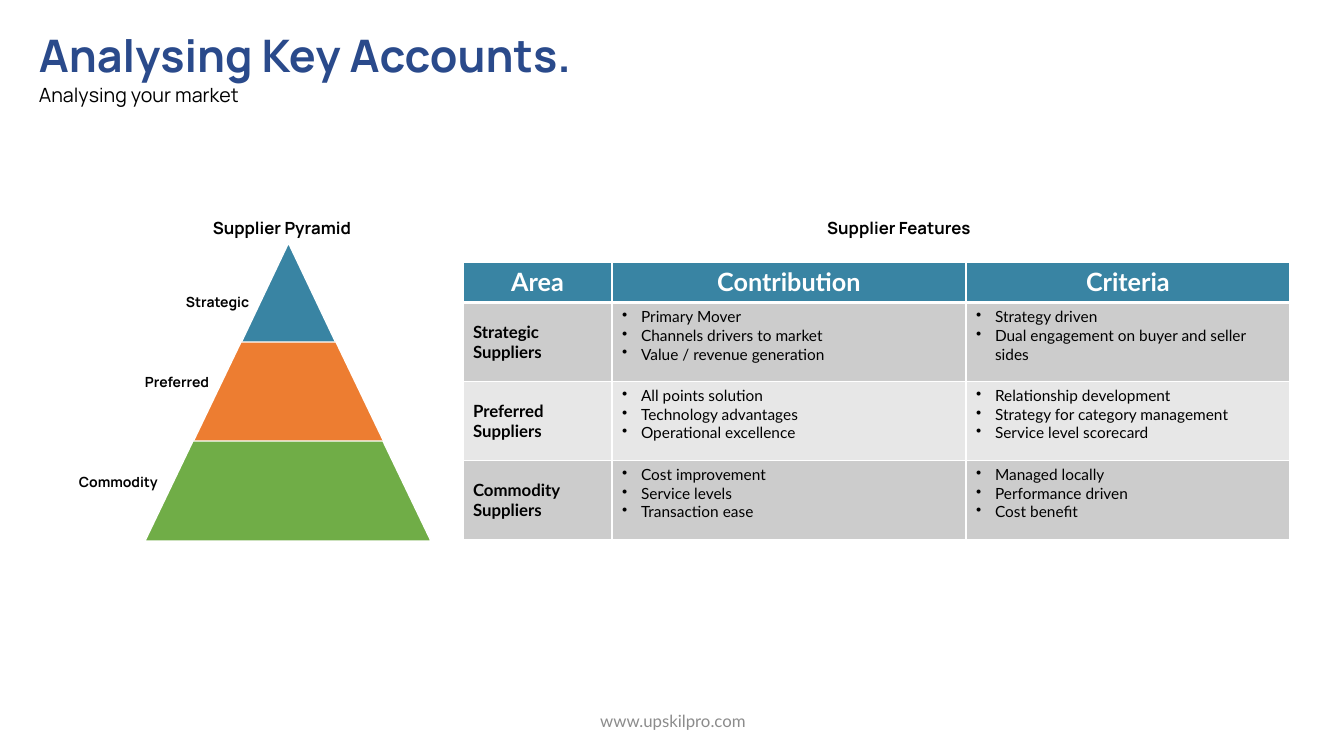
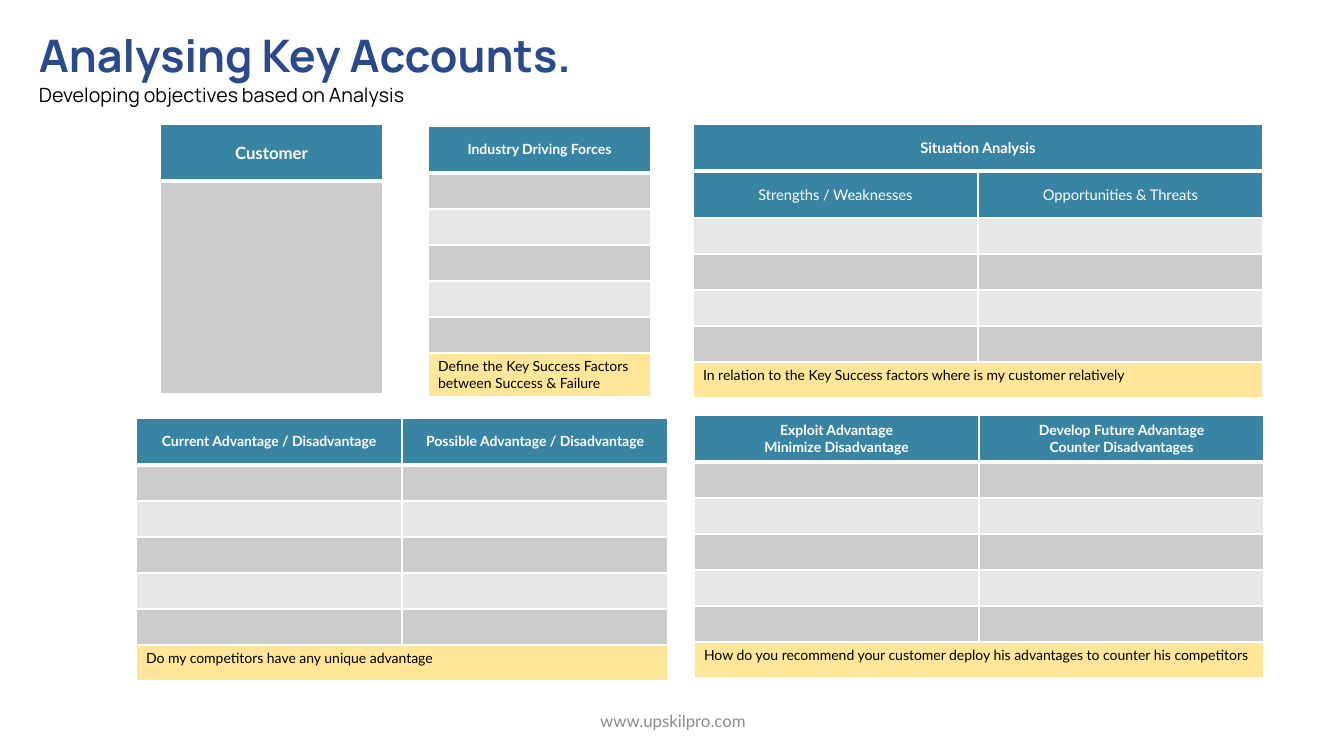
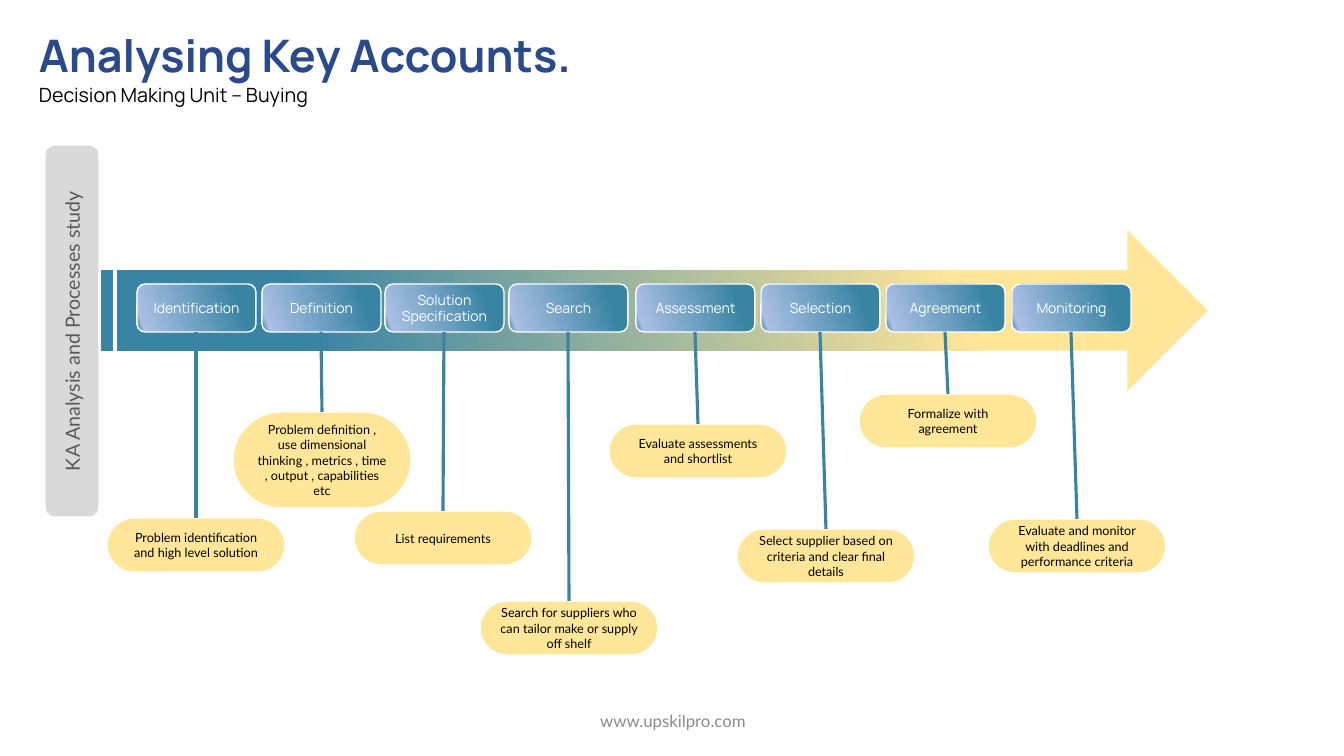
from dataclasses import dataclass

from lxml import etree
from pptx import Presentation
from pptx import util as u
from pptx.dml.color import RGBColor
from pptx.enum import shapes, text
from pptx.oxml.ns import qn

PX = 9071  # EMU in one px (100.8 px to the inch)


@dataclass(frozen=True)
class Theme:
    head: str = "Manrope"
    body: str = "Lato"
    navy: str = "2A4A8B"
    teal: str = "3984A3"
    orange: str = "ED7D31"
    green: str = "70AD47"
    yellow: str = "FFE699"
    dark_band: str = "CCCCCC"
    light_band: str = "E7E7E7"
    bar: str = "D9D9D9"
    bar_text: str = "595959"
    footer: str = "8C8C8C"
    sky: str = "ABC0E4"
    pale: str = "C7D5ED"
    black: str = "000000"
    white: str = "FFFFFF"
    title_pt: float = 32
    sub_pt: float = 14
    table_head_pt: float = 18
    heading_pt: float = 12
    bullet_pt: float = 11
    situation_pt: float = 10.5
    small_pt: float = 10
    callout_pt: float = 9


T = Theme()
LEFT, CENTER = text.PP_ALIGN.LEFT, text.PP_ALIGN.CENTER
MIDDLE = text.MSO_ANCHOR.MIDDLE
RECT = shapes.MSO_SHAPE.ROUNDED_RECTANGLE


def write(box, words, size, color=T.black, font=T.body, bold=False, align=LEFT, bullets=False):
    """Fill a shape, text box or cell; each line of words is a paragraph."""
    tf = box.text_frame
    tf.word_wrap = True
    tf.text = words
    for p in tf.paragraphs:
        p.alignment = align
        if bullets:
            pPr = p._p.get_or_add_pPr()
            pPr.set("marL", str(19 * PX))
            pPr.set("indent", str(-19 * PX))
            etree.SubElement(pPr, qn("a:buChar")).set("char", "•")
        for r in p.runs:
            r.font.name, r.font.size, r.font.bold = font, u.Pt(size), bold
            r.font.color.rgb = RGBColor.from_string(color)
        if not p.runs:
            etree.SubElement(p._p, qn("a:endParaRPr")).set("sz", str(int(size * 100)))
    return tf


def add_grid(s, x, y, cols, heights, heads, note=None):
    """Table with teal head rows, banded rows and an optional yellow note row."""
    t = s.shapes.add_table(len(heights), len(cols), x * PX, y * PX,
                           sum(cols) * PX, sum(heights) * PX).table
    for col, w in zip(t.columns, cols):
        col.width = w * PX
    for i, h in enumerate(heights):
        t.rows[i].height = h * PX
        is_head = i < len(heads)
        is_note = note is not None and i == len(heights) - 1
        size, bold, words = heads[i] if is_head else (T.small_pt, False, [note] if is_note else [""] * len(cols))
        fill = T.teal if is_head else T.yellow if is_note else T.dark_band if i % 2 else T.light_band
        for j in range(len(cols)):
            c = t.cell(i, j)
            tcPr = c._tc.get_or_add_tcPr()
            for side in "LRTB":
                thick = (i, side) in ((0, "B"), (1, "T"))
                ln = etree.SubElement(tcPr, qn("a:ln" + side), w=str(u.Pt(3 if thick else 1)))
                solid = etree.SubElement(ln, qn("a:solidFill"))
                etree.SubElement(solid, qn("a:srgbClr"), val=T.white)
            c.fill.solid()
            c.fill.fore_color.rgb = RGBColor.from_string(fill)
            if is_head:
                c.vertical_anchor = MIDDLE
            write(c, words[j] if j < len(words) else "", size, T.white if is_head else T.black,
                  bold=bold, align=CENTER if is_head else LEFT)
        if len(words) < len(cols):
            t.cell(i, 0).merge(t.cell(i, len(cols) - 1))
    return t


prs = Presentation()
prs.slide_width, prs.slide_height = 1344 * PX, 756 * PX

# Title, subtitle and footer of every slide
slides = []
for subtitle in ("Analysing your market", "Developing objectives based on Analysis",
                 "Decision Making Unit – Buying"):
    s = prs.slides.add_slide(prs.slide_layouts[6])
    slides.append(s)
    sp = s.shapes.add_textbox(446 * PX, 701 * PX, 454 * PX, 40 * PX)
    write(sp, "www.upskilpro.com", T.heading_pt, T.footer, align=CENTER).vertical_anchor = MIDDLE
    sp = s.shapes.add_textbox(29 * PX, 23 * PX, 707 * PX, 89 * PX)
    tf = write(sp, "Analysing Key Accounts.\n" + subtitle, T.title_pt, T.navy, T.head, True)
    p = tf.paragraphs[1]
    p.line_spacing, p.space_after = 1.07, u.Pt(8)
    r = p.runs[0]
    r.font.size, r.font.bold = u.Pt(T.sub_pt), False
    r.font.color.rgb = RGBColor.from_string(T.black)

# Slide 1: supplier pyramid
s = slides[0]
tiers = [(95, 0.5, T.teal), (191, 0.48, T.orange), (286, 0.48, T.green)]
for i, (w, adj, color) in enumerate(tiers):
    sp = s.shapes.add_shape(shapes.MSO_SHAPE.TRAPEZOID, (288 - w // 2) * PX, (243 + 99 * i) * PX,
                            w * PX, 100 * PX)
    sp.shadow.inherit = False
    sp.adjustments[0] = adj
    sp.fill.solid()
    sp.fill.fore_color.rgb = RGBColor.from_string(color)
    sp.line.color.rgb = RGBColor.from_string(T.white)
    sp.line.width = u.Pt(1)

labels = [
    (176, 288, 138, 27, "Strategic", T.small_pt, LEFT),
    (135, 368, 138, 27, "Preferred", T.small_pt, LEFT),
    (69, 468, 138, 27, "Commodity", T.small_pt, LEFT),
    (145, 213, 274, 30, "Supplier Pyramid", T.heading_pt, CENTER),
    (762, 213, 274, 30, "Supplier Features", T.heading_pt, CENTER),
]
for x, y, w, h, words, size, align in labels:
    sp = s.shapes.add_textbox(x * PX, y * PX, w * PX, h * PX)
    write(sp, words, size, font=T.head, bold=True, align=align).vertical_anchor = MIDDLE

# Slide 1: supplier features
features = [
    ("Strategic Suppliers",
     "Primary Mover\nChannels drivers to market\nValue / revenue generation",
     "Strategy driven\nDual engagement on buyer and seller sides"),
    ("Preferred Suppliers",
     "All points solution\nTechnology advantages\nOperational excellence",
     "Relationship development\nStrategy for category management\nService level scorecard"),
    ("Commodity Suppliers",
     "Cost improvement\nService levels\nTransaction ease",
     "Managed locally\nPerformance driven\nCost benefit"),
]
t = add_grid(s, 463, 262, [149, 354, 324], [40] + [79] * 3,
             [(T.table_head_pt, True, ["Area", "Contribution", "Criteria"])])
for i, (area, *lists) in enumerate(features, 1):
    write(t.cell(i, 0), area, T.heading_pt, bold=True)
    t.cell(i, 0).vertical_anchor = MIDDLE
    for j, words in enumerate(lists, 1):
        write(t.cell(i, j), words, T.bullet_pt, bullets=True)

# Slide 2: worksheets
s = slides[1]
worksheets = [
    (693, 124, [285] * 2, [47] * 2 + [36] * 5,
     [(T.situation_pt, True, ["Situation Analysis"]),
      (T.situation_pt, False, ["Strengths / Weaknesses", "Opportunities & Threats"])],
     "In relation to the Key Success factors where is my customer relatively"),
    (428, 126, [223], [47] + [36] * 5 + [43],
     [(T.small_pt, True, ["Industry Driving Forces"])],
     "Define the Key Success Factors between Success & Failure"),
    (160, 124, [223], [57, 213], [(T.heading_pt, True, ["Customer"])], None),
    (694, 415, [285] * 2, [47] + [36] * 6,
     [(T.small_pt, True, ["Exploit Advantage\nMinimize Disadvantage",
                          "Develop Future Advantage\nCounter Disadvantages"])],
     "How do you recommend your customer deploy his advantages to counter his competitors"),
    (136, 418, [266] * 2, [47] + [36] * 6,
     [(T.small_pt, True, ["Current Advantage / Disadvantage", "Possible Advantage / Disadvantage"])],
     "Do my competitors have any unique advantage"),
]
for worksheet in worksheets:
    add_grid(s, *worksheet)

# Slide 3: process arrow and side bar
s = slides[2]
arrow = s.shapes.add_shape(shapes.MSO_SHAPE.STRIPED_RIGHT_ARROW, 92 * PX, 230 * PX, 1116 * PX, 161 * PX)
arrow.shadow.inherit = False
arrow.line.fill.background()
gradients = [(arrow, [(5, T.yellow), (23, T.yellow), (80, T.teal), (100, T.teal), (100, T.pale)])]

# Rounded boxes: steps (x, name) and callouts (x, y, height, words)
steps = [(137, "Identification"), (262, "Definition"), (385, "Solution\nSpecification"), (509, "Search"),
         (636, "Assessment"), (761, "Selection"), (886, "Agreement"), (1012, "Monitoring")]
callouts = [
    (107, 518, 54, "Problem identification and high level solution"),
    (233, 412, 96, "Problem definition , use dimensional thinking , metrics , time , output , capabilities etc"),
    (354, 511, 54, "List requirements"),
    (480, 601, 54, "Search for suppliers who can tailor make or supply off shelf"),
    (609, 424, 54, "Evaluate assessments and shortlist"),
    (737, 529, 54, "Select supplier based on criteria and clear final details"),
    (859, 394, 54, "Formalize with agreement"),
    (988, 519, 54, "Evaluate and monitor with deadlines and performance criteria"),
]
boxes = [(-114, 304, 372, 54, "KA Analysis and Processes study", T.sub_pt, T.bar_text, T.body, T.bar)]
boxes += [(x, 284, 119, 48, words, T.small_pt, T.white, T.head, None) for x, words in steps]
boxes += [(x, y, 178, h, words, T.callout_pt, T.black, T.body, T.yellow) for x, y, h, words in callouts]
for x, y, w, h, words, size, color, font, fill in boxes:
    sp = s.shapes.add_shape(RECT, x * PX, y * PX, w * PX, h * PX)
    sp.shadow.inherit = False
    sp.line.color.rgb = RGBColor.from_string(T.white)
    sp.line.width = u.Pt(1)
    write(sp, words, size, color, font, align=CENTER).vertical_anchor = MIDDLE
    if fill is None:
        gradients.append((sp, [(17, T.teal), (94, T.sky), (100, T.teal), (100, T.pale)]))
        continue
    sp.fill.solid()
    sp.fill.fore_color.rgb = RGBColor.from_string(fill)
    if fill == T.bar:
        sp.rotation = 270
    else:
        sp.adjustments[0] = 0.5

# Gradient fills
for sp, stops in gradients:
    sp.fill.gradient()
    sp.fill.gradient_angle = 200
    gsLst = sp._element.spPr.find(".//" + qn("a:gsLst"))
    gsLst.clear()
    for pos, color in stops:
        gs = etree.SubElement(gsLst, qn("a:gs"), pos=str(pos * 1000))
        etree.SubElement(gs, qn("a:srgbClr"), val=color)

# Lines from each step to its callout
for (step_x, _), (x, y, _, _) in zip(steps, callouts):
    ln = s.shapes.add_connector(shapes.MSO_CONNECTOR.STRAIGHT, (step_x + 59) * PX, 332 * PX,
                                (x + 89) * PX, y * PX)
    ln.line.color.rgb = RGBColor.from_string(T.teal)
    ln.line.width = u.Pt(2.25)
    etree.SubElement(ln._element.spPr, qn("a:effectLst"))

prs.save("out.pptx")
